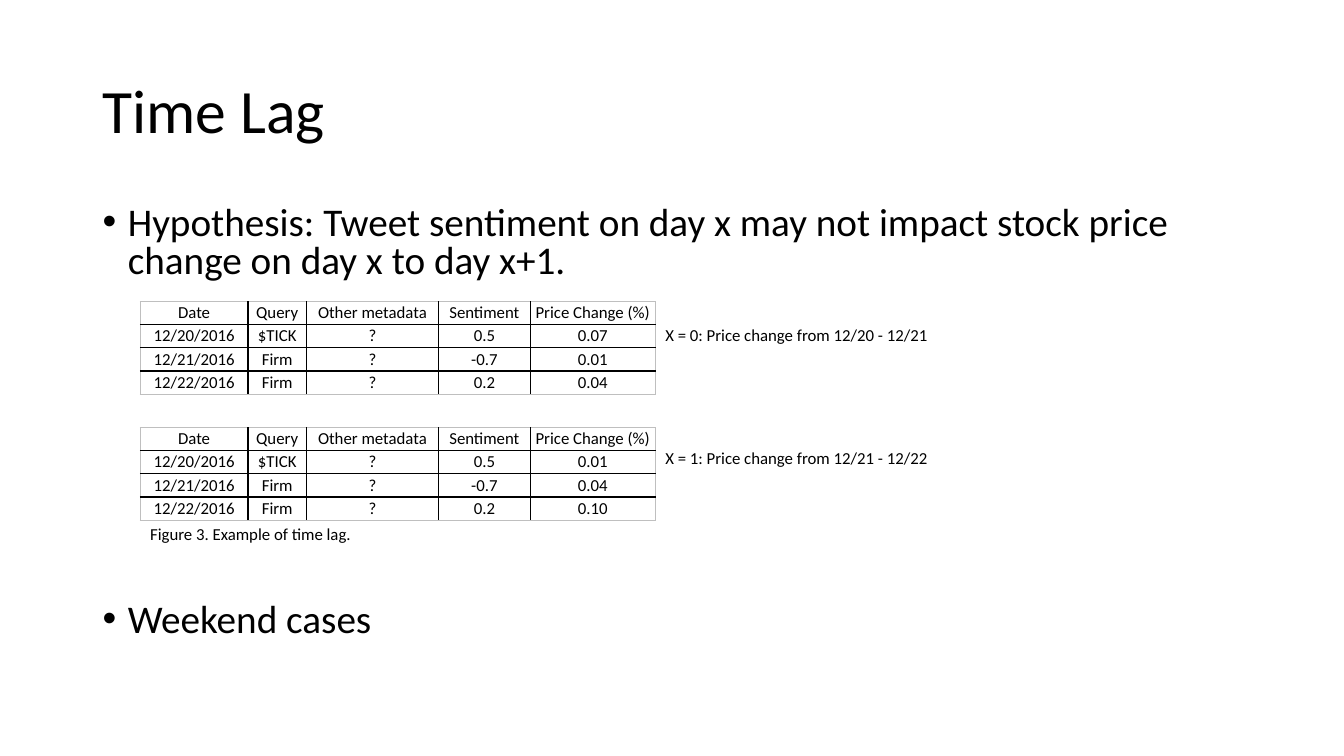
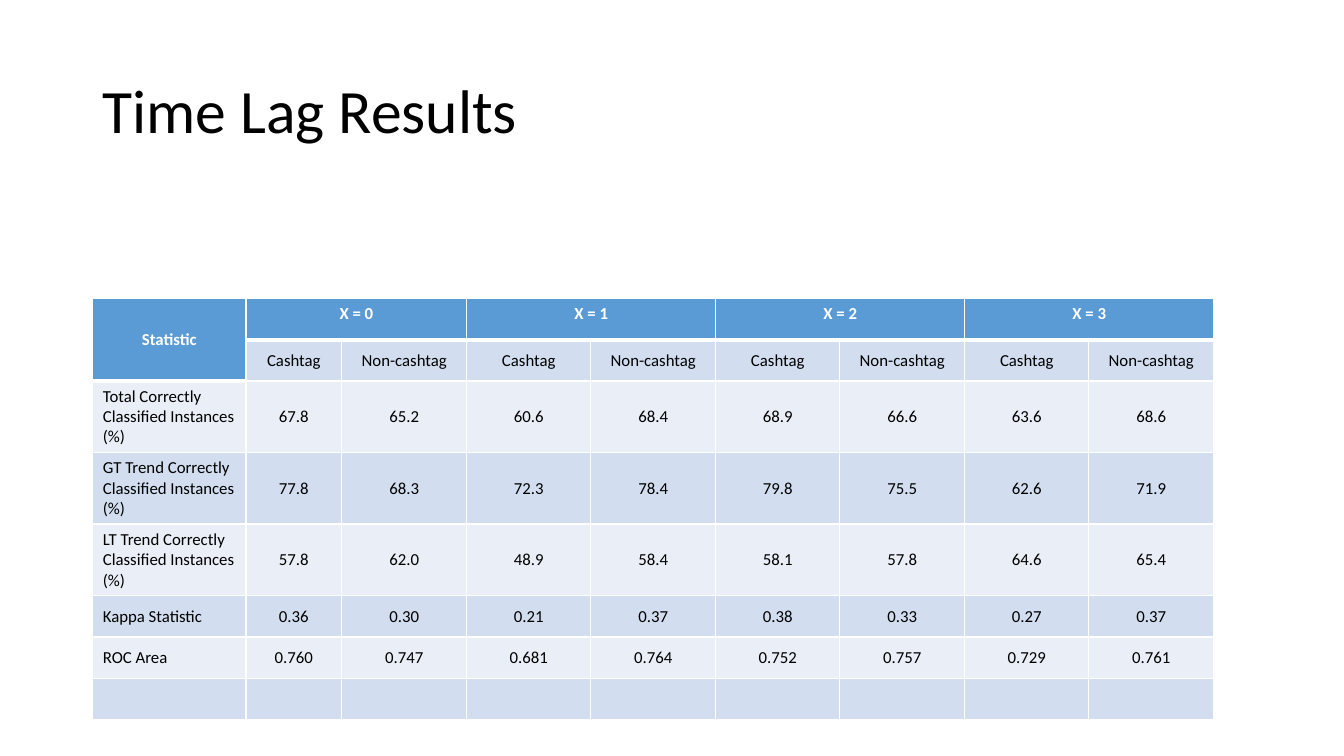
from dataclasses import dataclass

from lxml.etree import SubElement
from pptx import Presentation
from pptx.dml.color import RGBColor as RGB
from pptx.enum.text import MSO_ANCHOR as ANCHOR, PP_ALIGN as ALIGN
from pptx.oxml.ns import qn
from pptx.util import Emu, Pt

PX = 9144  # one px is a hundredth of an inch


def px(length):
    return Emu(length * PX)


@dataclass(frozen=True)
class Theme:
    font: str = "Calibri"
    ink: str = "000000"
    paper: str = "FFFFFF"
    frame: str = "BFBFBF"
    header: str = "5B9BD5"
    band_dark: str = "D2DEEF"
    band_light: str = "EAEFF7"
    title_size: int = 44
    body_size: int = 28
    small_size: int = 12


THEME = Theme()


@dataclass(frozen=True)
class CellLook:
    """Look of one cell; borders maps L, R, T, B to (colour, points)."""
    borders: dict
    fill: str = THEME.paper
    color: str = THEME.ink
    bold: bool = False
    align: ALIGN = ALIGN.CENTER
    anchor: ANCHOR = ANCHOR.MIDDLE
    inset: tuple = (10, 5)


class Deck:
    def __init__(self, theme, width, height):
        self.theme = theme
        self.file = Presentation()
        self.file.slide_width, self.file.slide_height = px(width), px(height)
        self.slide = None

    def new_slide(self, title):
        self.slide = self.file.slides.add_slide(self.file.slide_layouts[6])
        frame = self.frame(92, 40, 1150, 145, ANCHOR.MIDDLE)
        heading = frame.paragraphs[0]
        heading.line_spacing = 0.9
        self.run(heading, title, self.theme.title_size)

    def frame(self, left, top, width, height, anchor=ANCHOR.TOP):
        box = self.slide.shapes.add_textbox(px(left), px(top), px(width), px(height))
        box.text_frame.word_wrap = True
        box.text_frame.vertical_anchor = anchor
        return box.text_frame

    def run(self, paragraph, text, size, color=None, bold=False):
        run = paragraph.add_run()
        run.text = text
        run.font.name, run.font.size, run.font.bold = self.theme.font, Pt(size), bold
        run.font.color.rgb = RGB.from_string(color or self.theme.ink)

    def label(self, left, top, width, text):
        frame = self.frame(left, top, width, 30)
        self.run(frame.paragraphs[0], text, self.theme.small_size)

    def bullets(self, left, top, width, height, items):
        """Each item is its text and the points of space before it."""
        frame = self.frame(left, top, width, height)
        for index, (text, space) in enumerate(items):
            paragraph = frame.add_paragraph() if index else frame.paragraphs[0]
            paragraph.line_spacing, paragraph.space_before = 0.8, Pt(space)
            props = paragraph._p.get_or_add_pPr()
            props.set("marL", str(px(25)))
            props.set("indent", str(px(-25)))
            SubElement(props, qn("a:buFont"), typeface="Arial")
            SubElement(props, qn("a:buChar"), char="•")
            self.run(paragraph, text, self.theme.body_size)

    def table(self, left, top, widths, heights, rows, look):
        """Fill a table; look(row, column) gives the CellLook."""
        table = self.slide.shapes.add_table(
            len(heights), len(widths), px(left), px(top),
            px(sum(widths)), px(sum(heights))).table
        table.first_row = table.horz_banding = False
        for column, width in zip(table.columns, widths):
            column.width = px(width)
        for r, (height, texts) in enumerate(zip(heights, rows)):
            table.rows[r].height = px(height)
            for c, text in enumerate(texts):
                self.style_cell(table.cell(r, c), text, look(r, c))
        return table

    def style_cell(self, cell, text, look):
        props = cell._tc.get_or_add_tcPr()
        for side in "LRTB":
            color, points = look.borders[side]
            line = SubElement(props, qn(f"a:ln{side}"), w=str(Pt(points)))
            SubElement(SubElement(line, qn("a:solidFill")), qn("a:srgbClr"), val=color)
        cell.fill.solid()
        cell.fill.fore_color.rgb = RGB.from_string(look.fill)
        cell.vertical_anchor = look.anchor
        across, down = look.inset
        cell.margin_left = cell.margin_right = px(across)
        cell.margin_top = cell.margin_bottom = px(down)
        if text:
            paragraph = cell.text_frame.paragraphs[0]
            paragraph.alignment = look.align
            self.run(paragraph, text, self.theme.small_size, look.color, look.bold)


LAG_HEADER = ["Date", "Query", "Other metadata", "Sentiment", "Price Change (%)"]
LAG_TWEETS = [
    ["12/20/2016", "$TICK", "?", "0.5"],
    ["12/21/2016", "Firm", "?", "-0.7"],
    ["12/22/2016", "Firm", "?", "0.2"],
]
LAG_EXAMPLES = [
    (299, 317, "X = 0: Price change from 12/20 - 12/21", ["0.07", "0.01", "0.04"]),
    (424, 439, "X = 1: Price change from 12/21 - 12/22", ["0.01", "0.04", "0.10"]),
]
RESULTS = [
    ["Total Correctly Classified Instances (%)",
     "67.8", "65.2", "60.6", "68.4", "68.9", "66.6", "63.6", "68.6"],
    ["GT Trend Correctly Classified Instances (%)",
     "77.8", "68.3", "72.3", "78.4", "79.8", "75.5", "62.6", "71.9"],
    ["LT Trend Correctly Classified Instances (%)",
     "57.8", "62.0", "48.9", "58.4", "58.1", "57.8", "64.6", "65.4"],
    ["Kappa Statistic",
     "0.36", "0.30", "0.21", "0.37", "0.38", "0.33", "0.27", "0.37"],
    ["ROC Area",
     "0.760", "0.747", "0.681", "0.764", "0.752", "0.757", "0.729", "0.761"],
]


def lag_look(row, column):
    """Black rules inside, a thin grey frame outside."""
    inner, outer = (THEME.ink, 1), (THEME.frame, 0.5)
    last_row, last_column = len(LAG_TWEETS), len(LAG_HEADER) - 1
    return CellLook(inset=(3, 1), borders={
        "L": inner if column else outer,
        "R": inner if column < last_column else outer,
        "T": inner if row else outer,
        "B": inner if row < last_row else outer,
    })


def results_look(row, column):
    """Blue header over bands, with a thick white rule below the header."""
    header_end = 1 if column == 0 else 0
    borders = {side: (THEME.paper, 1) for side in "LRTB"}
    if row == header_end:
        borders["B"] = (THEME.paper, 3)
    elif row == header_end + 1:
        borders["T"] = (THEME.paper, 3)
    if row <= header_end:
        return CellLook(borders, THEME.header, THEME.paper, bold=True,
                        anchor=ANCHOR.TOP if column else ANCHOR.MIDDLE)
    return CellLook(borders, THEME.band_dark if row % 2 else THEME.band_light,
                    align=ALIGN.CENTER if column else ALIGN.LEFT)


def time_lag(deck):
    deck.new_slide("Time Lag")
    deck.bullets(92, 200, 1150, 476, [
        ("Hypothesis: Tweet sentiment on day x may not impact stock price "
         "change on day x to day x+1.", 10),
        ("Weekend cases", 230),
    ])
    for top, label_top, label, changes in LAG_EXAMPLES:
        rows = [LAG_HEADER] + [tweet + [change]
                               for tweet, change in zip(LAG_TWEETS, changes)]
        deck.table(139, top, [107, 58, 131, 91, 124], [23] * len(rows), rows, lag_look)
        deck.label(650, label_top, 285, label)
    deck.label(139, 515, 222, "Figure 3. Example of time lag.")


def time_lag_results(deck):
    deck.new_slide("Time Lag Results")
    lags = range(4)
    groups = ["Statistic"]
    for lag in lags:
        groups += [f"X = {lag}", ""]
    rows = [groups, [""] + ["Cashtag", "Non-cashtag"] * len(lags), *RESULTS, [""] * 9]
    widths = [152, 95] + [124, 123] * 3 + [124]
    heights = [41] * 2 + [71] * 3 + [41] * 3
    table = deck.table(92, 296, widths, heights, rows, results_look)
    table.cell(0, 0).merge(table.cell(1, 0))
    for lag in lags:
        first = 1 + 2 * lag
        table.cell(0, first).merge(table.cell(0, first + 1))


def main():
    deck = Deck(THEME, 1333, 750)
    time_lag(deck)
    time_lag_results(deck)
    deck.file.save("out.pptx")


if __name__ == "__main__":
    main()
